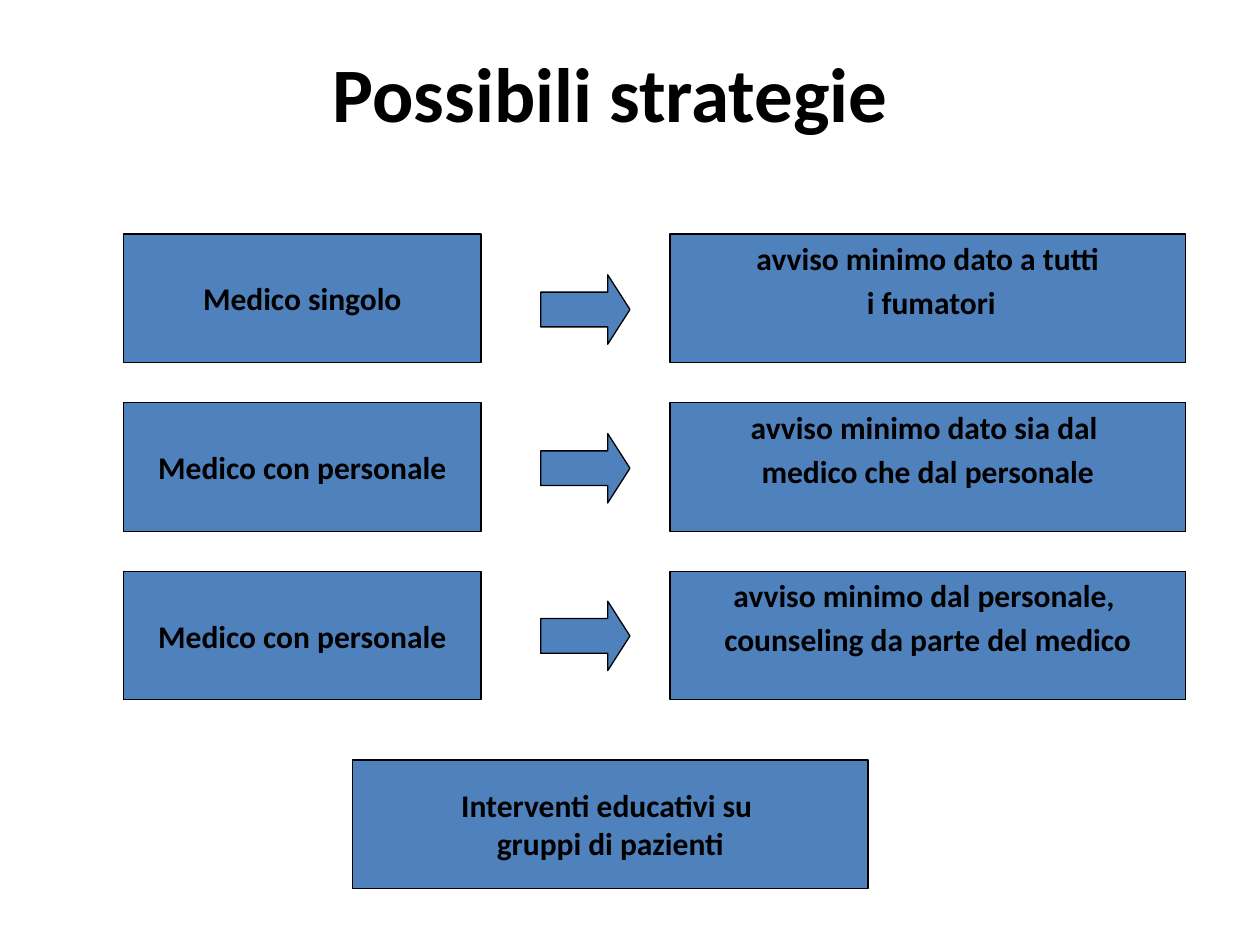
import pptx
import pptx.util
import pptx.dml.color
import pptx.enum.shapes
import pptx.enum.text

Cm, Pt = pptx.util.Cm, pptx.util.Pt
SHAPE = pptx.enum.shapes.MSO_SHAPE
ANCHOR = pptx.enum.text.MSO_ANCHOR

TITLE = "Possibili strategie"
ROWS = [
    ("Medico singolo", "avviso minimo dato a tutti\n i fumatori", 5.54),
    ("Medico con personale",
     "avviso minimo dato sia dal \nmedico che dal personale", 8.74),
    ("Medico con personale",
     "avviso minimo dal personale, \ncounseling da parte del medico", 12.12),
]
GROUP = "Interventi educativi su \ngruppi di pazienti"

COLORS = {"fill": "4F81BD", "ink": "000000"}
TOP, STEP, HIGH = 4.72, 3.4, 2.59
LEFT, RIGHT = 2.49, 13.51
NARROW, WIDE = 7.21, 10.39


def color(name):
    return pptx.dml.color.RGBColor.from_string(COLORS[name])


def write(shape, text, size, anchor=ANCHOR.MIDDLE, gap=0):
    """Centred bold text; gap is the space in points between paragraphs."""
    frame = shape.text_frame
    frame.text = text
    frame.vertical_anchor = anchor
    for i, para in enumerate(frame.paragraphs):
        para.alignment = pptx.enum.text.PP_ALIGN.CENTER
        para.space_before = Pt(gap if i else 0)
        for run in para.runs:
            run.font.name = "Calibri"
            run.font.size = Pt(size)
            run.font.bold = True
            run.font.color.rgb = color("ink")
    return frame


def draw(slide, kind, *place):
    shape = slide.shapes.add_shape(kind, *map(Cm, place))
    shape.shadow.inherit = False
    shape.fill.solid()
    shape.fill.fore_color.rgb = color("fill")
    shape.line.color.rgb = color("ink")
    shape.line.width = Pt(0.75)
    return shape


def box(slide, text, x, y, width, **style):
    shape = draw(slide, SHAPE.RECTANGLE, x, y, width, HIGH)
    frame = write(shape, text, 18, **style)
    frame.word_wrap = False
    return frame


def main():
    deck = pptx.Presentation()
    deck.slide_width, deck.slide_height = Cm(25.4), Cm(19.05)
    slide = deck.slides.add_slide(deck.slide_layouts[6])

    title = slide.shapes.add_textbox(Cm(1.73), Cm(0.25), Cm(21.16), Cm(3.18))
    write(title, TITLE, 44).word_wrap = True

    for i, (who, what, level) in enumerate(ROWS):
        y = TOP + i * STEP
        box(slide, who, LEFT, y, NARROW)
        frame = box(slide, what, RIGHT, y, WIDE, anchor=ANCHOR.TOP, gap=3.6)
        frame.margin_top = Cm(0.1)
        arrow = draw(slide, SHAPE.RIGHT_ARROW, 10.9, level, 1.8, 1.4)
        arrow.adjustments[0] = 0.5
        arrow.adjustments[1] = 0.32

    box(slide, GROUP, 7.11, 15.32, WIDE)
    deck.save("out.pptx")


if __name__ == "__main__":
    main()
